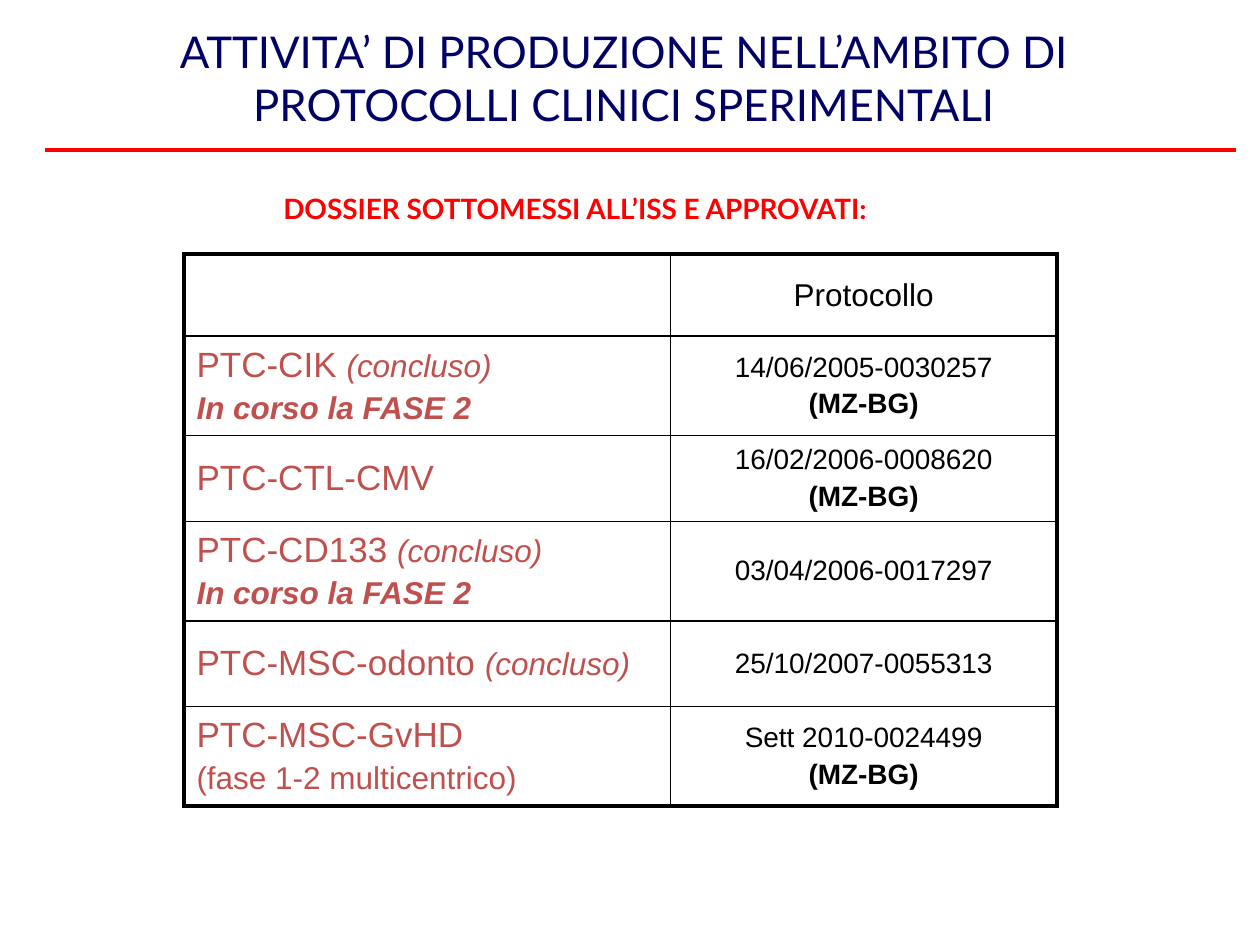
from typing import NamedTuple

from lxml import etree
from pptx import Presentation, util as u
from pptx.dml.color import RGBColor
from pptx.enum import shapes, text
from pptx.oxml.ns import qn

WIDTH, HEIGHT = 10, 7.5
BLACK, RED, NAVY, BRICK = "000000", "FF0000", "000066", "C0504D"
THIN, THICK = 1, 2.25
COLUMNS = [3.86, 3.07]
ROWS = [0.65, 0.79, 0.68, 0.79, 0.68, 0.79]


class Span(NamedTuple):
    words: str
    size: float
    color: str = BLACK
    bold: bool = False
    italic: bool = False
    font: str = "Arial"


class Protocol(NamedTuple):
    name: list[list[Span]]
    code: list[list[Span]]


def rgb(color: str) -> RGBColor:
    return RGBColor.from_string(color)


def style(font, span: Span) -> None:
    font.name, font.size = span.font, u.Pt(span.size)
    font.bold, font.italic = span.bold, span.italic
    font.color.rgb = rgb(span.color)


def write(frame, lines: list[list[Span]], align, spacing: float = 0) -> None:
    """Write one paragraph per line; spacing is a share of the font size."""
    for index, line in enumerate(lines):
        para = frame.paragraphs[0] if index == 0 else frame.add_paragraph()
        para.alignment = align
        para.space_before = u.Pt(spacing * max(span.size for span in line))
        if len(line) == 1:
            style(para.font, line[0])
        for span in line:
            run = para.add_run()
            run.text = span.words
            if len(line) > 1:
                style(run.font, span)


def add_heading(page, left, top, width, height, lines, align) -> None:
    """Place a text box given in shares of the slide's size."""
    box = page.shapes.add_textbox(
        u.Inches(left * WIDTH), u.Inches(top * HEIGHT),
        u.Inches(width * WIDTH), u.Inches(height * HEIGHT))
    box.text_frame.word_wrap = False
    write(box.text_frame, lines, align)


def add_rule(page, left: float, right: float, y: float) -> None:
    ends = [u.Inches(n) for n in (left * WIDTH, y * HEIGHT, right * WIDTH, y * HEIGHT)]
    rule = page.shapes.add_connector(shapes.MSO_CONNECTOR.STRAIGHT, *ends)
    rule.line.color.rgb = rgb(RED)
    rule.line.width = u.Pt(THICK)
    etree.SubElement(rule._element.spPr, qn("a:effectLst"))


def set_borders(cell, row: int, column: int) -> None:
    """Thick on the table's outer edge, thin inside."""
    outer = {"lnL": column == 0, "lnR": column == len(COLUMNS) - 1,
             "lnT": row == 0, "lnB": row == len(ROWS) - 1}
    for side, is_outer in outer.items():
        line = etree.SubElement(cell._tc.get_or_add_tcPr(), qn(f"a:{side}"),
                                w=str(u.Pt(THICK if is_outer else THIN)))
        fill = etree.SubElement(line, qn("a:solidFill"))
        etree.SubElement(fill, qn("a:srgbClr"), val=BLACK)


def add_protocols(page, left: float, top: float, protocols: list[Protocol]) -> None:
    table = page.shapes.add_table(
        len(ROWS), len(COLUMNS), u.Inches(left * WIDTH), u.Inches(top * HEIGHT),
        u.Inches(sum(COLUMNS)), u.Inches(sum(ROWS))).table
    table.first_row = table.horz_banding = False
    for column, width in zip(table.columns, COLUMNS):
        column.width = u.Inches(width)
    aligns = [text.PP_ALIGN.LEFT, text.PP_ALIGN.CENTER]
    for r, protocol in enumerate(protocols):
        table.rows[r].height = u.Inches(ROWS[r])
        for c, lines in enumerate(protocol):
            cell = table.cell(r, c)
            cell.vertical_anchor = text.MSO_ANCHOR.MIDDLE
            set_borders(cell, r, c)
            cell.fill.background()
            write(cell.text_frame, lines, aligns[c], spacing=0.2)


def name(words: str) -> Span:
    return Span(words, 20, BRICK)


def code(words: str) -> list[Span]:
    return [Span(words, 16)]


DONE = Span("(concluso)", 18, BRICK, italic=True)
PHASE_2 = [Span("In corso la FASE 2", 18, BRICK, bold=True, italic=True)]
SITES = [Span("(MZ-BG)", 16, bold=True)]
PROTOCOLS = [
    Protocol([], [[Span("Protocollo", 18)]]),
    Protocol([[name("PTC-CIK "), DONE], PHASE_2], [code("14/06/2005-0030257"), SITES]),
    Protocol([[name("PTC-CTL-CMV")]], [code("16/02/2006-0008620"), SITES]),
    Protocol([[name("PTC-CD133 "), DONE], PHASE_2], [code("03/04/2006-0017297")]),
    Protocol([[name("PTC-MSC-odonto "), DONE]], [code("25/10/2007-0055313")]),
    Protocol([[name("PTC-MSC-GvHD")], [Span("(fase 1-2 multicentrico)", 18, BRICK)]],
             [code("Sett 2010-0024499"), SITES]),
]
TITLE = ["ATTIVITA’ DI PRODUZIONE NELL’AMBITO DI", "PROTOCOLLI CLINICI SPERIMENTALI"]
SUBTITLE = Span("DOSSIER SOTTOMESSI ALL’ISS E APPROVATI:", 16, RED, bold=True, font="Lato")


def main() -> None:
    deck = Presentation()
    deck.slide_width, deck.slide_height = u.Inches(WIDTH), u.Inches(HEIGHT)
    page = deck.slides.add_slide(deck.slide_layouts[6])

    # Title and subtitle
    add_heading(page, 0.13, 0.02, 0.73, 0.12,
                [[Span(words, 25, NAVY, font="Lato")] for words in TITLE],
                text.PP_ALIGN.CENTER)
    add_heading(page, 0.215, 0.196, 0.537, 0.05, [[SUBTITLE]], text.PP_ALIGN.LEFT)

    # Protocol table
    add_protocols(page, 0.146, 0.269, PROTOCOLS)

    # Red rule under the title
    add_rule(page, 0.036, 0.981, 0.159)
    deck.save("out.pptx")


if __name__ == "__main__":
    main()
